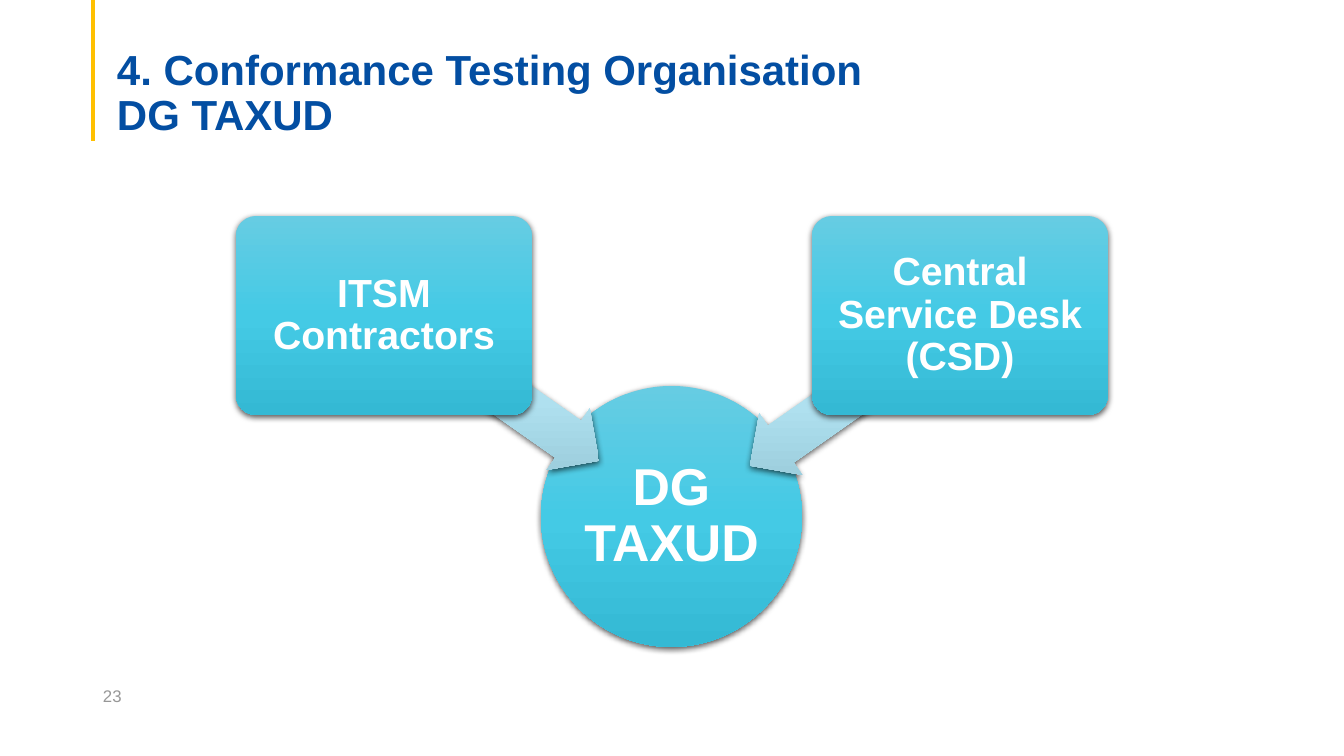
from lxml import etree
from pptx import Presentation
from pptx.dml.color import RGBColor
from pptx.enum.shapes import MSO_CONNECTOR, MSO_SHAPE as SHAPE
from pptx.enum.text import MSO_ANCHOR as ANCHOR, PP_ALIGN as ALIGN
from pptx.oxml import parse_xml
from pptx.oxml.ns import nsdecls, qn
from pptx.util import Pt

PX = 914400 * 10 // 1008  # EMU per px
BLUE_STOPS = [(0, "66CCE3"), (50, "44CAE5"), (100, "34B9D4")]
PALE_STOPS = [(0, "BDE4EF"), (50, "AFE0EF"), (100, "97C9D8")]


def write(sp, text, size, color, bold=False, align=ALIGN.LEFT,
          anchor=ANCHOR.MIDDLE, insets=(10, 5, 10, 5), spacing=None):
    tf = sp.text_frame
    tf.word_wrap = True
    tf.vertical_anchor = anchor
    tf.margin_left, tf.margin_top, tf.margin_right, tf.margin_bottom = [
        i * PX for i in insets]
    for n, line in enumerate(text.split("\n")):
        p = tf.add_paragraph() if n else tf.paragraphs[0]
        p.alignment = align
        p.line_spacing = spacing
        r = p.add_run()
        r.text = line
        r.font.name, r.font.size, r.font.bold = "Arial", Pt(size), bold
        r.font.color.rgb = RGBColor.from_string(color)


def add_glossy(kind, box, stops):
    """Shape with a vertical gradient and a soft shadow below."""
    sp = s.shapes.add_shape(kind, *[v * PX for v in box])
    sp.line.fill.background()
    gs = "".join(f'<a:gs pos="{pos * 1000}"><a:srgbClr val="{c}"/></a:gs>'
                 for pos, c in stops)
    grad = parse_xml(f'<a:gradFill {nsdecls("a")} rotWithShape="0"><a:gsLst>{gs}'
                     '</a:gsLst><a:lin ang="5400000" scaled="0"/></a:gradFill>')
    shadow = parse_xml(
        f'<a:effectLst {nsdecls("a")}><a:outerShdw blurRad="57150" dist="19050" '
        'dir="5400000" algn="ctr" rotWithShape="0"><a:srgbClr val="000000">'
        '<a:alpha val="63000"/></a:srgbClr></a:outerShdw></a:effectLst>')
    pr = sp._element.spPr
    pr.find(qn("a:ln")).addprevious(grad)
    pr.append(shadow)
    return sp


prs = Presentation()
prs.slide_width, prs.slide_height = 1344 * PX, 756 * PX
s = prs.slides.add_slide(prs.slide_layouts[6])

# Accent line
accent = s.shapes.add_connector(MSO_CONNECTOR.STRAIGHT, 93 * PX, 0, 93 * PX, 141 * PX)
accent.line.color.rgb = RGBColor.from_string("FFC000")
accent.line.width = Pt(2.25)
etree.SubElement(accent._element.spPr, qn("a:effectLst"))

# Page number and title
number = s.shapes.add_textbox(*[v * PX for v in (93, 676, 302, 40)])
write(number, "23", 12, "979797")
title = s.shapes.add_textbox(*[v * PX for v in (107, 53, 1159, 87)])
write(title, "4. Conformance Testing Organisation\nDG TAXUD", 30, "034EA2", bold=True,
      anchor=ANCHOR.BOTTOM, insets=(10, 5, 10, 0), spacing=0.9)

# Central circle
hub = add_glossy(SHAPE.OVAL, (541, 386, 261, 261), BLUE_STOPS)
write(hub, "DG TAXUD", 37, "FFFFFF", bold=True, align=ALIGN.CENTER,
      insets=(3, 3, 3, 3), spacing=0.9)

# Contributors, each with an arrow into the circle
for text, left, arrow_left, arrow_top, angle in [
        ("ITSM Contractors", 236, 408, 363, 215),
        ("Central Service Desk (CSD)", 812, 731, 368, 325)]:
    arrow = add_glossy(SHAPE.LEFT_ARROW, (arrow_left, arrow_top, 210, 75), PALE_STOPS)
    arrow.adjustments[0], arrow.adjustments[1] = 0.6, 0.5
    arrow.rotation = angle
    card = add_glossy(SHAPE.ROUNDED_RECTANGLE, (left, 216, 296, 199), BLUE_STOPS)
    card.adjustments[0] = 0.1
    write(card, text, 28, "FFFFFF", bold=True, align=ALIGN.CENTER,
          insets=(6, 6, 6, 6), spacing=0.9)

prs.save("out.pptx")
